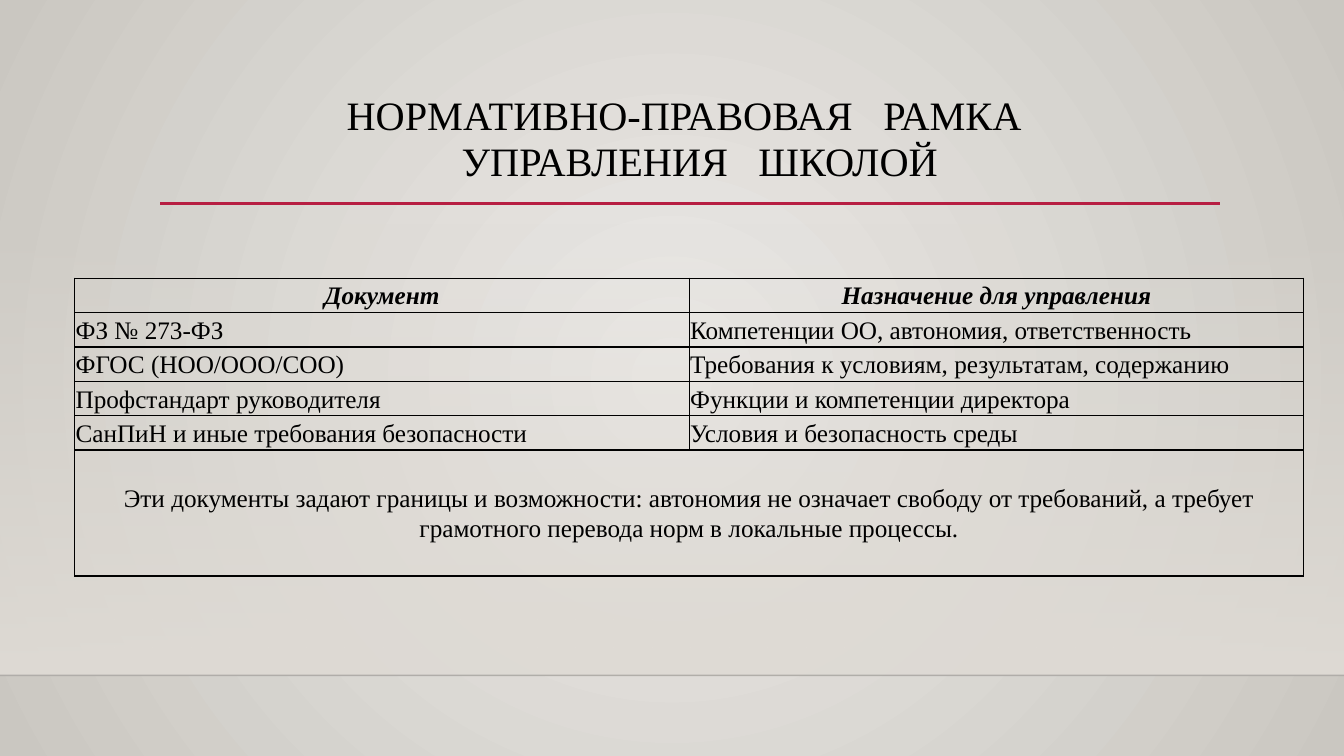
from lxml.etree import SubElement
from pptx import Presentation
from pptx.dml.color import RGBColor
from pptx.enum.shapes import MSO_CONNECTOR, MSO_SHAPE
from pptx.enum.text import MSO_ANCHOR, PP_ALIGN
from pptx.oxml.ns import qn
from pptx.util import Inches, Pt

FONT = "Times New Roman"
BLACK = "000000"
TITLE = [  # words of a line, left indent, right indent
    (["НОРМАТИВНО‑ПРАВОВАЯ", "РАМКА"], 0, 0.11),
    (["УПРАВЛЕНИЯ", "ШКОЛОЙ"], 0.2, 0),
]
WORD_GAP = 14.4  # points added to the space between title words
HEADER = ("Документ", "Назначение для управления")
DOCUMENTS = [
    ("ФЗ № 273‑ФЗ", "Компетенции ОО, автономия, ответственность"),
    ("ФГОС (НОО/ООО/СОО)", "Требования к условиям, результатам, содержанию"),
    ("Профстандарт руководителя", "Функции и компетенции директора"),
    ("СанПиН и иные требования безопасности", "Условия и безопасность среды"),
]
CONCLUSION = (
    "Эти документы задают границы и возможности: автономия не означает свободу "
    "от требований, а требует грамотного перевода норм в локальные процессы."
)
WIDTH, HEIGHT, FLOOR = 13.33, 7.5, 6.7
ROW_HEIGHT, CONCLUSION_HEIGHT = 0.32, 1.25


def color(value):
    return RGBColor.from_string(value)


def add_gradient(fill, owner, stops, circular=False):
    """Fill owner with (percent, colour, opacity) stops, downwards or from the centre."""
    fill.gradient()
    gradient = next(owner.iter(qn("a:gradFill")))
    for child in list(gradient):
        gradient.remove(child)
    stop_list = SubElement(gradient, qn("a:gsLst"))
    for position, value, opacity in stops:
        stop = SubElement(stop_list, qn("a:gs"), pos=str(position * 1000))
        tint = SubElement(stop, qn("a:srgbClr"), val=value)
        SubElement(tint, qn("a:alpha"), val=str(opacity * 1000))
    if circular:
        center = SubElement(gradient, qn("a:path"), path="circle")
        SubElement(center, qn("a:fillToRect"), l="50000", t="50000", r="50000", b="50000")
    else:
        SubElement(gradient, qn("a:lin"), ang="5400000", scaled="0")


def add_rule(slide, left, right, top, value, weight, opacity=100):
    rule = slide.shapes.add_connector(
        MSO_CONNECTOR.STRAIGHT, Inches(left), Inches(top), Inches(right), Inches(top))
    rule.line.width = Pt(weight)
    rule.line.color.rgb = color(value)
    tint = next(rule.element.spPr.iter(qn("a:srgbClr")))
    SubElement(tint, qn("a:alpha"), val=str(opacity * 1000))
    SubElement(rule.element.spPr, qn("a:effectLst"))


def add_span(para, text, size, accent=False):
    span = para.add_run()
    span.text = text
    span.font.name = FONT
    span.font.size = Pt(size)
    span.font.bold = span.font.italic = accent
    span.font.color.rgb = color(BLACK)
    return span


def add_title(slide):
    box = slide.shapes.add_textbox(Inches(1.59), Inches(0.88), Inches(10.5), Inches(1.15))
    frame = box.text_frame
    frame.word_wrap = True
    frame.vertical_anchor = MSO_ANCHOR.TOP
    for index, (words, left, right) in enumerate(TITLE):
        para = frame.add_paragraph() if index else frame.paragraphs[0]
        para.alignment = PP_ALIGN.CENTER
        para.line_spacing = 0.95
        properties = para._p.get_or_add_pPr()
        properties.set("marL", str(Inches(left)))
        properties.set("marR", str(Inches(right)))
        for position, word in enumerate(words):
            if position:
                gap = add_span(para, " ", 28.8)
                gap.font._element.set("spc", str(round(WORD_GAP * 100)))
            add_span(para, word, 28.8)


def style_cell(cell):
    cell.fill.background()
    cell.vertical_anchor = MSO_ANCHOR.MIDDLE
    cell.margin_left = cell.margin_right = Inches(0.01)
    cell.margin_top = cell.margin_bottom = Inches(0.01)
    properties = cell._tc.get_or_add_tcPr()
    for index, side in enumerate(("lnL", "lnR", "lnT", "lnB")):
        border = properties.makeelement(qn(f"a:{side}"), {"w": str(Pt(1))})
        fill = SubElement(border, qn("a:solidFill"))
        SubElement(fill, qn("a:srgbClr"), val=BLACK)
        properties.insert(index, border)


def write_cell(cell, text, centered=False, accent=False):
    para = cell.text_frame.paragraphs[0]
    para.alignment = PP_ALIGN.CENTER if centered else PP_ALIGN.LEFT
    para.line_spacing = 1.07
    para.space_after = Pt(8)
    add_span(para, text, 18, accent)


def add_documents_table(slide):
    rows = [HEADER, *DOCUMENTS]
    last = len(rows)
    table = slide.shapes.add_table(
        last + 1, 2, Inches(0.74), Inches(2.76), Inches(12.19),
        Inches(last * ROW_HEIGHT + CONCLUSION_HEIGHT)).table
    table.first_row = table.horz_banding = False
    for row in table.rows:
        row.height = Inches(ROW_HEIGHT)
    table.rows[last].height = Inches(CONCLUSION_HEIGHT)
    for cell in table.iter_cells():
        style_cell(cell)
    for row_index, row in enumerate(rows):
        is_header = row_index == 0
        for column, text in enumerate(row):
            write_cell(table.cell(row_index, column), text, is_header, is_header)
    table.cell(last, 0).merge(table.cell(last, 1))
    write_cell(table.cell(last, 0), CONCLUSION, centered=True)


def main():
    deck = Presentation()
    deck.slide_width, deck.slide_height = Inches(WIDTH), Inches(HEIGHT)
    slide = deck.slides.add_slide(deck.slide_layouts[6])
    add_gradient(slide.background.fill, slide.element,
                 [(0, "ECEAE7", 100), (100, "CAC7C1", 100)], circular=True)

    wall = slide.shapes.add_shape(
        MSO_SHAPE.RECTANGLE, 0, Inches(2.21), Inches(WIDTH), Inches(FLOOR - 2.21))
    wall.shadow.inherit = False
    wall.line.fill.background()
    add_gradient(wall.fill, wall.element, [(0, "DFDBD5", 0), (100, "DFDBD5", 100)])

    add_rule(slide, 0, WIDTH, FLOOR, "000001", 1, opacity=20)
    add_rule(slide, 1.59, 12.1, 2.02, "B71E42", 2.5)
    add_title(slide)
    add_documents_table(slide)
    deck.save("out.pptx")


if __name__ == "__main__":
    main()
